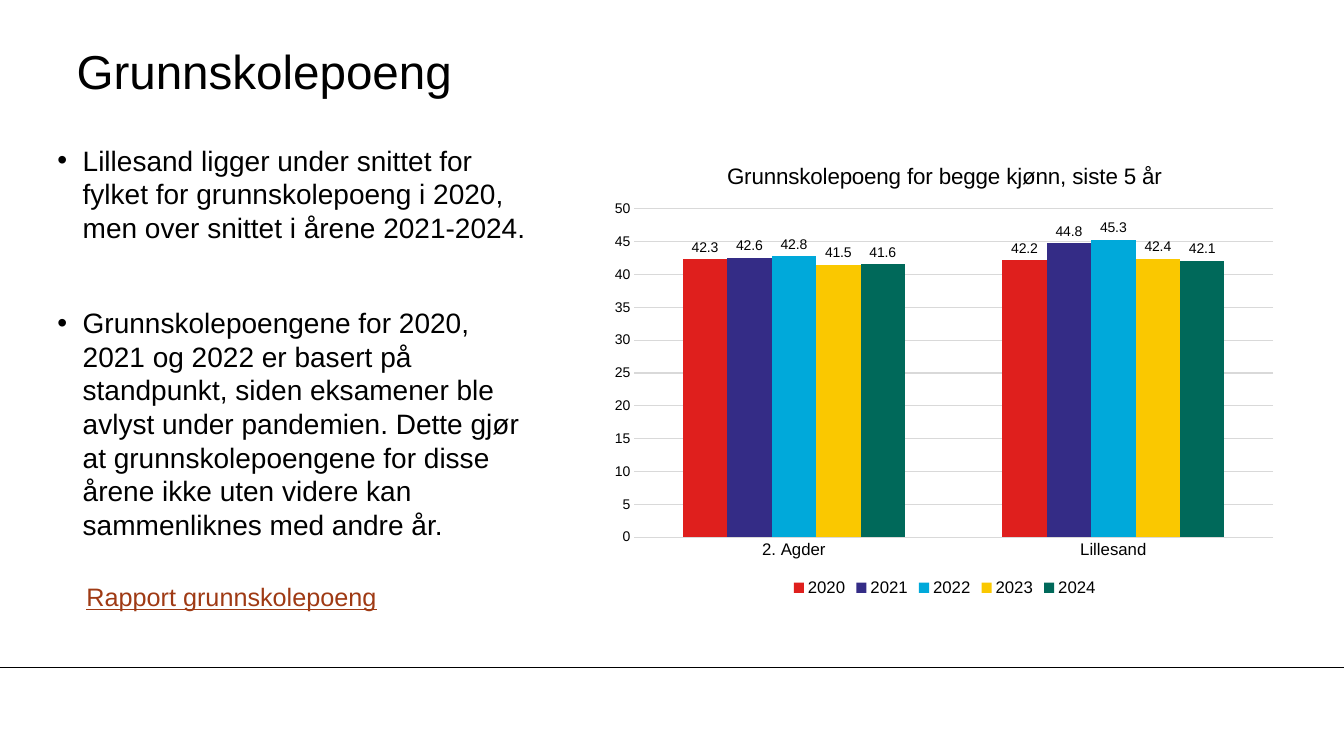
from lxml import etree
from pptx import Presentation
from pptx import util as u
from pptx.chart import data as chart_data
from pptx.dml.color import RGBColor
from pptx.enum import chart as ch, shapes, text
from pptx.oxml import ns

BLACK = RGBColor(0x00, 0x00, 0x00)
GRID = RGBColor(0xD9, 0xD9, 0xD9)
LINK = RGBColor(0x9F, 0x3A, 0x14)
FONT = "Arial"
SCORES = [
    ("2020", (42.3, 42.2), RGBColor(0xDF, 0x1F, 0x1D)),
    ("2021", (42.6, 44.8), RGBColor(0x34, 0x2C, 0x86)),
    ("2022", (42.8, 45.3), RGBColor(0x00, 0xA9, 0xDA)),
    ("2023", (41.5, 42.4), RGBColor(0xFA, 0xC8, 0x00)),
    ("2024", (41.6, 42.1), RGBColor(0x00, 0x69, 0x5A)),
]
BULLETS = [
    ("Lillesand ligger under snittet for fylket for grunnskolepoeng i 2020, "
     "men over snittet i årene 2021-2024.", 0),
    ("Grunnskolepoengene for 2020, 2021 og 2022 er basert på standpunkt, "
     "siden eksamener ble avlyst under pandemien. Dette gjør at "
     "grunnskolepoengene for disse årene ikke uten videre kan sammenliknes "
     "med andre år.", 44),
]


def style(font, size, color=BLACK):
    font.name = FONT
    font.size = u.Pt(size)
    font.bold = False
    font.color.rgb = color


def manual_layout(**values):
    layout = etree.Element(ns.qn("c:layout"))
    manual = etree.SubElement(layout, ns.qn("c:manualLayout"))
    for key, value in values.items():
        etree.SubElement(manual, ns.qn("c:" + key)).set("val", str(value))
    return layout


deck = Presentation()
deck.slide_width = u.Inches(13.33)
deck.slide_height = u.Inches(7.5)
page = deck.slides.add_slide(deck.slide_layouts[6])

footer_line = page.shapes.add_connector(
    shapes.MSO_CONNECTOR.STRAIGHT,
    u.Inches(0), u.Inches(6.62), u.Inches(13.33), u.Inches(6.62))
footer_line.line.color.rgb = BLACK
footer_line.line.width = u.Pt(0.75)
etree.SubElement(footer_line._element.spPr, ns.qn("a:effectLst"))

title_box = page.shapes.add_textbox(
    u.Inches(0.76), u.Inches(0.32), u.Inches(11.1), u.Inches(0.75))
body_box = page.shapes.add_textbox(
    u.Inches(0.57), u.Inches(1.42), u.Inches(4.72), u.Inches(3.95))
link_box = page.shapes.add_textbox(
    u.Inches(0.76), u.Inches(5.72), u.Inches(3.3), u.Inches(0.4))
for box in (title_box, body_box, link_box):
    box.text_frame.word_wrap = True
for box in (title_box, body_box):
    frame = box.text_frame
    frame.margin_left = frame.margin_right = u.Inches(0)
    frame.margin_top = frame.margin_bottom = u.Inches(0)

title_box.text_frame.vertical_anchor = text.MSO_ANCHOR.MIDDLE
span = title_box.text_frame.paragraphs[0].add_run()
span.text = "Grunnskolepoeng"
style(span.font, 34)

for index, (wording, space) in enumerate(BULLETS):
    frame = body_box.text_frame
    para = frame.add_paragraph() if index else frame.paragraphs[0]
    props = para._p.get_or_add_pPr()
    props.set("marL", str(u.Inches(0.25)))
    props.set("indent", str(u.Inches(-0.25)))
    etree.SubElement(props, ns.qn("a:buFont")).set("typeface", FONT)
    etree.SubElement(props, ns.qn("a:buChar")).set("char", "•")
    para.line_spacing = u.Pt(24)
    para.space_before = u.Pt(space)
    span = para.add_run()
    span.text = wording
    style(span.font, 20)

span = link_box.text_frame.paragraphs[0].add_run()
span.text = "Rapport grunnskolepoeng"
style(span.font, 18, LINK)
span.font.underline = True

scores = chart_data.CategoryChartData()
scores.categories = ["2. Agder", "Lillesand"]
for year, values, color in SCORES:
    scores.add_series(year, values)
chart = page.shapes.add_chart(
    ch.XL_CHART_TYPE.COLUMN_CLUSTERED, u.Inches(5.97), u.Inches(1.42),
    u.Inches(6.8), u.Inches(4.54), scores).chart
style(chart.font, 10)

chart.has_title = True
span = chart.chart_title.text_frame.paragraphs[0].add_run()
span.text = "Grunnskolepoeng for begge kjønn, siste 5 år"
style(span.font, 16)
chart.chart_title.include_in_layout = False
chart.chart_title._element.find(ns.qn("c:tx")).addnext(
    manual_layout(xMode="edge", yMode="edge", x=0.18, y=0.04))

chart.has_legend = True
chart.legend.position = ch.XL_LEGEND_POSITION.BOTTOM
chart.legend.include_in_layout = False
style(chart.legend.font, 12)

category_axis, value_axis = chart.category_axis, chart.value_axis
for axis, size in ((category_axis, 12), (value_axis, 10)):
    axis.major_tick_mark = ch.XL_TICK_MARK.NONE
    axis.minor_tick_mark = ch.XL_TICK_MARK.NONE
    style(axis.tick_labels.font, size)
value_axis.minimum_scale = 0
value_axis.maximum_scale = 50
value_axis.major_unit = 5
value_axis.has_major_gridlines = True
value_axis.format.line.fill.background()
for line in (category_axis.format.line, value_axis.major_gridlines.format.line):
    line.color.rgb = GRID
    line.width = u.Pt(0.75)

plot = chart.plots[0]
plot.vary_by_categories = False
plot.gap_width = 219
plot.overlap = 0
for series, (year, values, color) in zip(plot.series, SCORES):
    series.format.fill.solid()
    series.format.fill.fore_color.rgb = color
    labels = series.data_labels
    labels.show_value = True
    labels.position = ch.XL_LABEL_POSITION.OUTSIDE_END
    style(labels.font, 10)

plot_area = chart._chartSpace.chart.plotArea
for layout in plot_area.findall(ns.qn("c:layout")):
    plot_area.remove(layout)
plot_area.insert(0, manual_layout(
    layoutTarget="inner", xMode="edge", yMode="edge",
    x=0.047, y=0.144, w=0.932, h=0.717))

deck.save("out.pptx")
